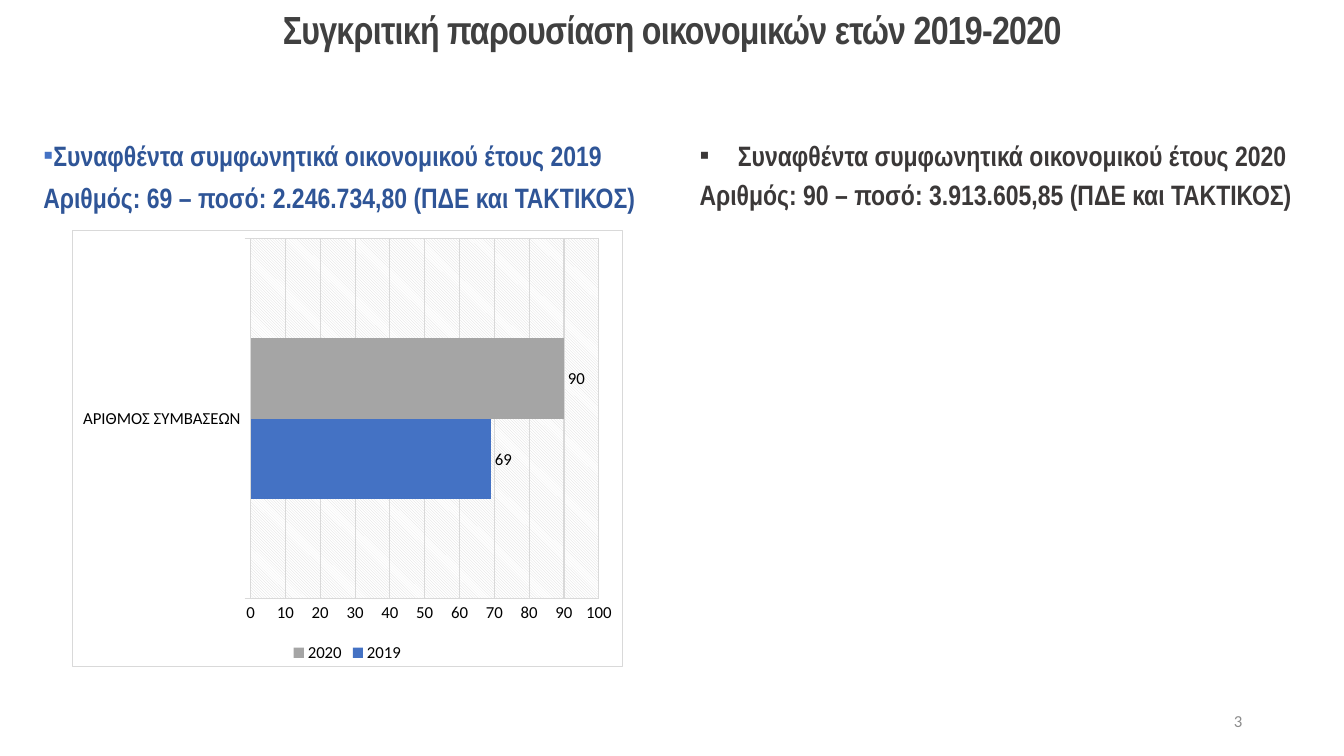
from lxml import etree
from pptx import Presentation, util as u
from pptx.chart.data import CategoryChartData
from pptx.dml.color import RGBColor
from pptx.enum import chart as charts, dml, text
from pptx.oxml import parse_xml
from pptx.oxml.ns import nsdecls, qn

WIDTH, HEIGHT = u.Inches(13.33), u.Inches(7.5)

TITLE_GREY = RGBColor(0x40, 0x40, 0x40)
DARK_BLUE = RGBColor(0x2F, 0x55, 0x97)
DARK_GREY = RGBColor(0x3B, 0x38, 0x38)
NUMBER_GREY = RGBColor(0x8C, 0x8C, 0x8C)
BLUE = RGBColor(0x44, 0x72, 0xC4)
GREY = RGBColor(0xA5, 0xA5, 0xA5)
GRID_GREY = RGBColor(0xD9, 0xD9, 0xD9)
WHITE = RGBColor(0xFF, 0xFF, 0xFF)
BLACK = RGBColor(0, 0, 0)

HEADING = {"name": "Arial Narrow", "bold": True}
CHART_FONT = {"name": "Calibri", "size": u.Pt(12)}

SERIES = [("2019", 69, BLUE), ("2020", 90, GREY)]


def share(left, top, width, height):
    """Turn percentages of the slide into lengths."""
    return [u.Emu(int(side * percent / 100)) for side, percent in
            zip((WIDTH, HEIGHT, WIDTH, HEIGHT), (left, top, width, height))]


def set_all(target, values):
    for name, value in values.items():
        setattr(target, name, value)


def set_font(font, values, color):
    set_all(font, values)
    font.color.rgb = color


def add_text(slide, place, lines, font, color, frame_format):
    """Add a text box; lines holds pairs of wording and paragraph format."""
    frame = slide.shapes.add_textbox(*share(*place)).text_frame
    set_all(frame, {"word_wrap": True, **frame_format})
    for index, (wording, paragraph_format) in enumerate(lines):
        paragraph = frame.paragraphs[0] if index == 0 else frame.add_paragraph()
        set_all(paragraph, paragraph_format)
        run = paragraph.add_run()
        run.text = wording
        set_font(run.font, font, color)
    return frame


def add_bullet(paragraph, indent, color):
    properties = paragraph._p.get_or_add_pPr()
    properties.set("marL", str(u.Inches(indent)))
    properties.set("indent", str(-u.Inches(indent)))
    bullet_color = etree.SubElement(properties, qn("a:buClr"))
    etree.SubElement(bullet_color, qn("a:srgbClr"), val=str(color))
    etree.SubElement(properties, qn("a:buFont"), typeface="Arial")
    etree.SubElement(properties, qn("a:buChar"), char="▪")


def style_line(line):
    line.color.rgb = GRID_GREY
    line.width = u.Pt(0.75)


def style_backgrounds(chart):
    """Give the chart a white ground with a border, and the plot a hatch."""
    chart_part = chart.element.find(qn("c:chart"))
    chart_part.addnext(parse_xml(
        f'<c:spPr {nsdecls("c", "a")}>'
        f'<a:solidFill><a:srgbClr val="{WHITE}"/></a:solidFill>'
        f'<a:ln w="{u.Pt(0.75)}"><a:solidFill><a:srgbClr val="{GRID_GREY}"/>'
        '</a:solidFill></a:ln></c:spPr>'))
    chart_part.find(qn("c:plotArea")).append(parse_xml(
        f'<c:spPr {nsdecls("c", "a")}><a:pattFill prst="ltDnDiag">'
        f'<a:fgClr><a:srgbClr val="{GRID_GREY}"/></a:fgClr>'
        f'<a:bgClr><a:srgbClr val="{WHITE}"/></a:bgClr></a:pattFill>'
        '<a:ln><a:noFill/></a:ln></c:spPr>'))


def add_contracts_chart(slide, place):
    data = CategoryChartData()
    data.categories = ["ΑΡΙΘΜΟΣ ΣΥΜΒΑΣΕΩΝ"]
    for year, count, _ in SERIES:
        data.add_series(year, [count])
    chart = slide.shapes.add_chart(
        charts.XL_CHART_TYPE.BAR_CLUSTERED, *share(*place), data).chart
    set_all(chart, {"has_title": False, "has_legend": True})
    set_font(chart.font, {"name": "Calibri", "size": u.Pt(10)}, BLACK)

    set_all(chart.legend, {"position": charts.XL_LEGEND_POSITION.BOTTOM,
                           "include_in_layout": False})
    set_font(chart.legend.font, CHART_FONT, BLACK)

    ticks = charts.XL_TICK_MARK
    for axis, tick in ((chart.category_axis, ticks.OUTSIDE),
                       (chart.value_axis, ticks.NONE)):
        set_all(axis, {"has_major_gridlines": True, "major_tick_mark": tick,
                       "minor_tick_mark": ticks.NONE})
        set_font(axis.tick_labels.font, CHART_FONT, BLACK)
        style_line(axis.major_gridlines.format.line)
    style_line(chart.category_axis.format.line)
    chart.value_axis.format.line.fill.background()

    plot = chart.plots[0]
    set_all(plot, {"gap_width": 247, "overlap": 0, "vary_by_categories": False})
    for series, (_, _, color) in zip(plot.series, SERIES):
        series.format.fill.solid()
        series.format.fill.fore_color.rgb = color
        labels = series.data_labels
        set_all(labels, {"show_value": True,
                         "position": charts.XL_LABEL_POSITION.OUTSIDE_END})
        set_font(labels.font, CHART_FONT, BLACK)
    style_backgrounds(chart)


def main():
    presentation = Presentation()
    set_all(presentation, {"slide_width": WIDTH, "slide_height": HEIGHT})
    slide = presentation.slides.add_slide(presentation.slide_layouts[6])

    title = add_text(
        slide, (0, 0, 100, 7.6),
        [("Συγκριτική παρουσίαση οικονομικών ετών 2019-2020",
          {"alignment": text.PP_ALIGN.CENTER, "line_spacing": 0.85})],
        {**HEADING, "size": u.Pt(28)}, TITLE_GREY,
        {"vertical_anchor": text.MSO_ANCHOR.BOTTOM})
    title.paragraphs[0].runs[0].font._element.set("spc", "-50")

    summary_font = {**HEADING, "size": u.Pt(20)}
    four_before = {"space_before": u.Pt(4)}
    summary_2019 = add_text(
        slide, (2.48, 17.6, 67.52, 14.13),
        [("Συναφθέντα συμφωνητικά οικονομικού έτους 2019",
          {"space_before": u.Pt(12), "space_after": u.Pt(2)}),
         ("Αριθμός: 69 – ποσό: 2.246.734,80 (ΠΔΕ και ΤΑΚΤΙΚΟΣ)", four_before)],
        summary_font, DARK_BLUE, {})
    add_bullet(summary_2019.paragraphs[0], 0.1, BLUE)

    summary_2020 = add_text(
        slide, (51.31, 17.6, 46.29, 11.2),
        [("Συναφθέντα συμφωνητικά οικονομικού έτους 2020", four_before),
         ("Αριθμός: 90 – ποσό: 3.913.605,85 (ΠΔΕ και ΤΑΚΤΙΚΟΣ)", four_before)],
        summary_font, DARK_GREY,
        {"word_wrap": False, "auto_size": text.MSO_AUTO_SIZE.SHAPE_TO_FIT_TEXT})
    add_bullet(summary_2020.paragraphs[0], 0.38, DARK_GREY)

    add_contracts_chart(slide, (5.33, 30.4, 41.04, 57.87))
    add_text(slide, (70.67, 92.67, 22.5, 5.33),
             [("3", {"alignment": text.PP_ALIGN.RIGHT})],
             CHART_FONT, NUMBER_GREY,
             {"vertical_anchor": text.MSO_ANCHOR.MIDDLE})
    presentation.save("out.pptx")


if __name__ == "__main__":
    main()
